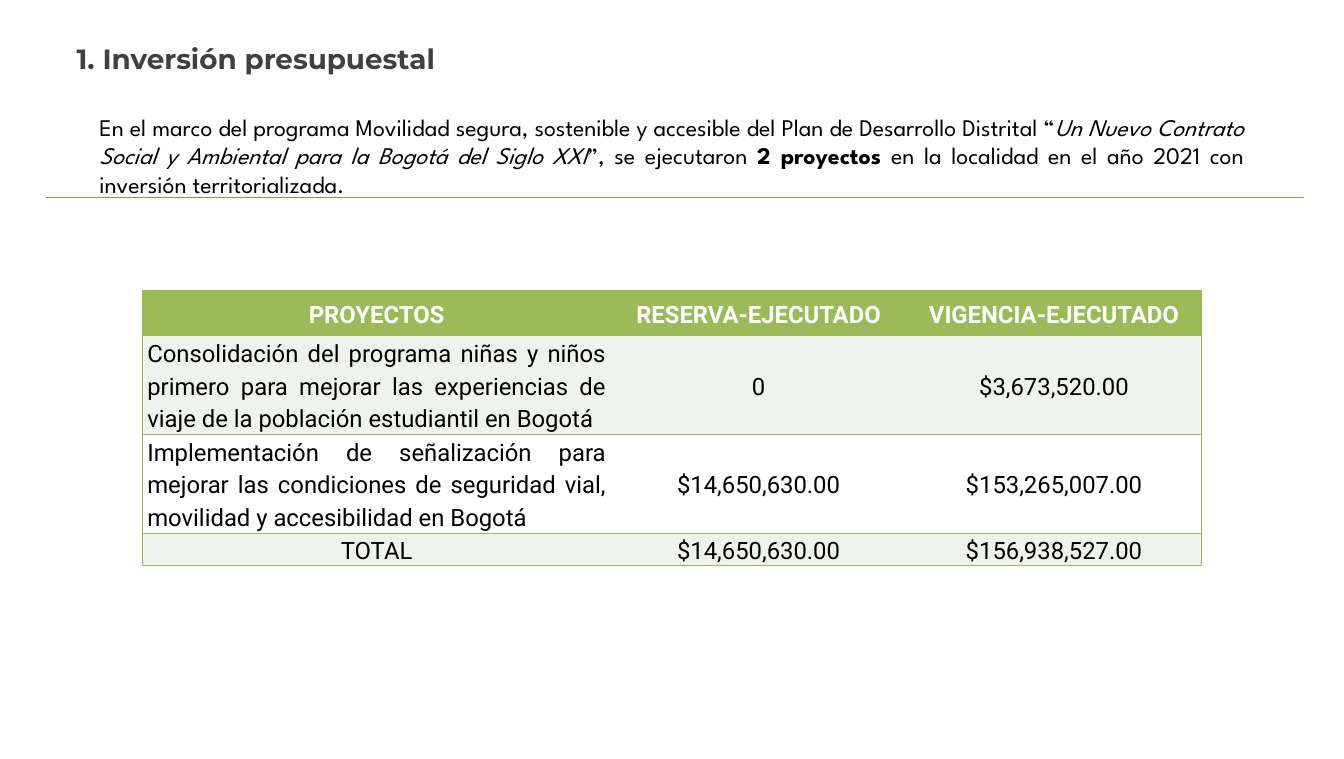
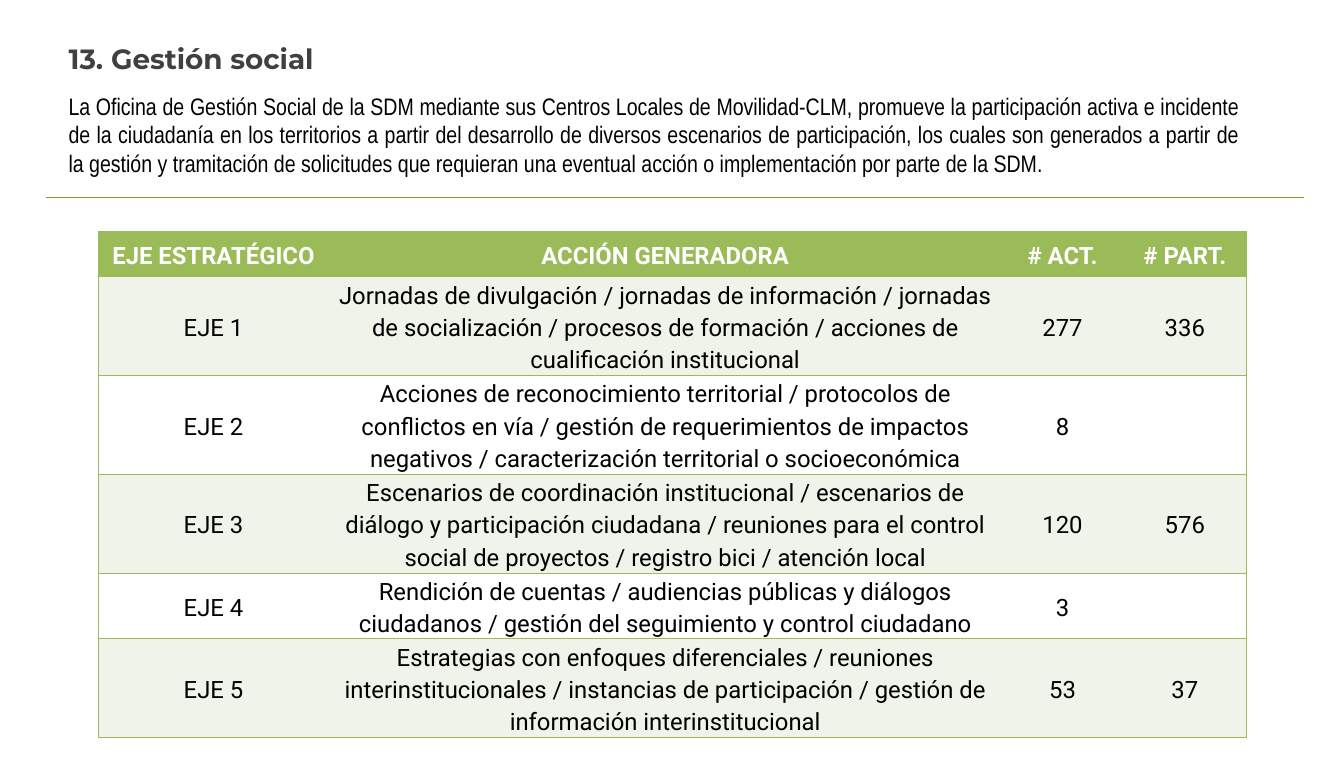
"""Build two slides on local investment and social management, each with a table."""
from lxml import etree
from pptx import Presentation
from pptx import util as u
from pptx.dml.color import RGBColor
from pptx.enum import shapes, text
from pptx.oxml import ns

GREEN, PALE, WHITE, BLACK = "9BBB59", "EFF3EA", "FFFFFF", "000000"
TITLE_GREY, RULE = "404040", "94962C"
CENTER, LEFT, JUSTIFY = text.PP_ALIGN.CENTER, text.PP_ALIGN.LEFT, text.PP_ALIGN.JUSTIFY
HEADER_HEIGHT, LINE_HEIGHT = 0.63, 0.46

SLIDES = [
    {
        "title": "1. Inversión presupuestal",
        "title_left": 0.97,
        "intro": [
            ("En el marco del programa Movilidad segura, sostenible y accesible "
             "del Plan de Desarrollo Distrital “", {}),
            ("Un Nuevo Contrato Social y Ambiental para la Bogotá del Siglo XXI",
             {"italic": True}),
            ("”, se ejecutaron ", {}),
            ("2 proyectos ", {"bold": True}),
            ("en la localidad en el año 2021 con inversión territorializada.", {}),
        ],
        "intro_font": "League Spartan",
        "intro_box": (1.29, 1.52, 16.2, 1.31),
        "table_at": (1.99, 4.06),
        "columns": [6.55, 4.13, 4.13],
        "header": ["PROYECTOS", "RESERVA-EJECUTADO", "VIGENCIA-EJECUTADO"],
        "rows": [
            (3, ["Consolidación del programa niñas y niños primero para mejorar las "
                 "experiencias de viaje de la población estudiantil en Bogotá",
                 "0", "$3,673,520.00"]),
            (3, ["Implementación de señalización para mejorar las condiciones de "
                 "seguridad vial, movilidad y accesibilidad en Bogotá",
                 "$14,650,630.00", "$153,265,007.00"]),
            (1, ["TOTAL", "$14,650,630.00", "$156,938,527.00"]),
        ],
    },
    {
        "title": "13. Gestión social",
        "title_left": 0.86,
        "intro": [
            ("La Oficina de Gestión Social de la SDM mediante sus Centros Locales de "
             "Movilidad-CLM, promueve la participación activa e incidente de la "
             "ciudadanía en los territorios a partir del desarrollo de diversos "
             "escenarios de participación, los cuales son generados a partir de la "
             "gestión y tramitación de solicitudes que requieran una eventual acción "
             "o implementación por parte de la SDM.", {}),
        ],
        "intro_font": "Arial Narrow",
        "intro_box": (0.86, 1.23, 16.56, 1.31),
        "table_at": (1.37, 3.24),
        "columns": [3.23, 9.4, 1.71, 1.71],
        "header": ["EJE ESTRATÉGICO", "ACCIÓN GENERADORA", "# ACT.", "# PART."],
        "rows": [
            (3, ["EJE 1", "Jornadas de divulgación / jornadas de información / jornadas "
                 "de socialización / procesos de formación / acciones de "
                 "cualificación institucional", "277", "336"]),
            (3, ["EJE 2", "Acciones de reconocimiento territorial / protocolos de "
                 "conflictos en vía / gestión de requerimientos de impactos negativos / "
                 "caracterización territorial o socioeconómica", "8", ""]),
            (3, ["EJE 3", "Escenarios de coordinación institucional / escenarios de "
                 "diálogo y participación ciudadana / reuniones para el control social "
                 "de proyectos / registro bici / atención local", "120", "576"]),
            (2, ["EJE 4", "Rendición de cuentas / audiencias públicas y diálogos "
                 "ciudadanos / gestión del seguimiento y control ciudadano", "3", ""]),
            (3, ["EJE 5", "Estrategias con enfoques diferenciales / reuniones "
                 "interinstitucionales / instancias de participación / gestión de "
                 "información interinstitucional", "53", "37"]),
        ],
    },
]


def rgb(value):
    return RGBColor.from_string(value)


def write(frame, runs, font, size=24, color=BLACK, bold=False, align=LEFT,
          spacing=1.0, after=0):
    frame.word_wrap = True
    paragraph = frame.paragraphs[0]
    paragraph.alignment = align
    paragraph.line_spacing = spacing
    paragraph.space_before = u.Pt(0)
    paragraph.space_after = u.Pt(after)
    for words, style in runs:
        run = paragraph.add_run()
        run.text = words
        run.font.name = font
        run.font.size = u.Pt(size)
        run.font.color.rgb = rgb(color)
        run.font.bold = style.get("bold", bold)
        run.font.italic = style.get("italic", False)


def place(shape, left, top, width, height):
    shape.left, shape.top = u.Inches(left), u.Inches(top)
    shape.width, shape.height = u.Inches(width), u.Inches(height)


def add_title(slide, words, left):
    title = slide.shapes.title
    place(title, left, 0.53, 12.4, 0.57)
    title.text_frame.auto_size = text.MSO_AUTO_SIZE.NONE
    title.text_frame.vertical_anchor = text.MSO_ANCHOR.TOP
    write(title.text_frame, [(words, {})], "Montserrat", 28, TITLE_GREY, bold=True)


def add_rule(slide):
    rule = slide.shapes.add_connector(
        shapes.MSO_CONNECTOR.STRAIGHT,
        u.Inches(0.64), u.Inches(2.76), u.Inches(18.23), u.Inches(2.76))
    rule.line.color.rgb = rgb(RULE)
    rule.line.width = u.Pt(0.75)
    etree.SubElement(rule._element.spPr, ns.qn("a:effectLst"))


def set_borders(cell, sides):
    properties = cell._tc.get_or_add_tcPr()
    for position, side in enumerate("LRTB"):
        border = etree.Element(ns.qn(f"a:ln{side}"), w=str(u.Pt(1)))
        if side in sides:
            fill = etree.SubElement(border, ns.qn("a:solidFill"))
            etree.SubElement(fill, ns.qn("a:srgbClr"), val=GREEN)
        else:
            etree.SubElement(border, ns.qn("a:noFill"))
        properties.insert(position, border)


def fill_cell(cell, words, fill, sides, **style):
    cell.fill.solid()
    cell.fill.fore_color.rgb = rgb(fill)
    set_borders(cell, sides)
    cell.vertical_anchor = text.MSO_ANCHOR.MIDDLE
    cell.margin_left = cell.margin_right = u.Inches(0.07)
    cell.margin_top = cell.margin_bottom = 0
    if words:
        write(cell.text_frame, [(words, {})], "Roboto", spacing=1.15, after=10, **style)


def add_grid(slide, content):
    columns = content["columns"]
    rows = [content["header"]] + [cells for _, cells in content["rows"]]
    heights = [HEADER_HEIGHT] + [lines * LINE_HEIGHT for lines, _ in content["rows"]]
    box = (*content["table_at"], sum(columns), sum(heights))
    grid = slide.shapes.add_table(len(rows), len(columns), *map(u.Inches, box)).table
    for column, width in zip(grid.columns, columns):
        column.width = u.Inches(width)
    for r, (cells, height) in enumerate(zip(rows, heights)):
        grid.rows[r].height = u.Inches(height)
        fill = GREEN if r == 0 else PALE if r % 2 else WHITE
        for c, words in enumerate(cells):
            sides = "TB" + "L" * (c == 0) + "R" * (c == len(columns) - 1)
            long_label = r > 0 and c == 0 and len(words) > 20
            fill_cell(grid.cell(r, c), words, fill, sides, bold=r == 0,
                      color=BLACK if r else WHITE,
                      align=JUSTIFY if long_label else CENTER)


def main():
    deck = Presentation()
    deck.slide_width, deck.slide_height = u.Inches(18.79), u.Inches(10.61)
    for content in SLIDES:
        slide = deck.slides.add_slide(deck.slide_layouts[5])
        add_title(slide, content["title"], content["title_left"])
        intro = slide.shapes.add_textbox(*map(u.Inches, content["intro_box"]))
        write(intro.text_frame, content["intro"], content["intro_font"], align=JUSTIFY)
        add_rule(slide)
        add_grid(slide, content)
    deck.save("out.pptx")


if __name__ == "__main__":
    main()
